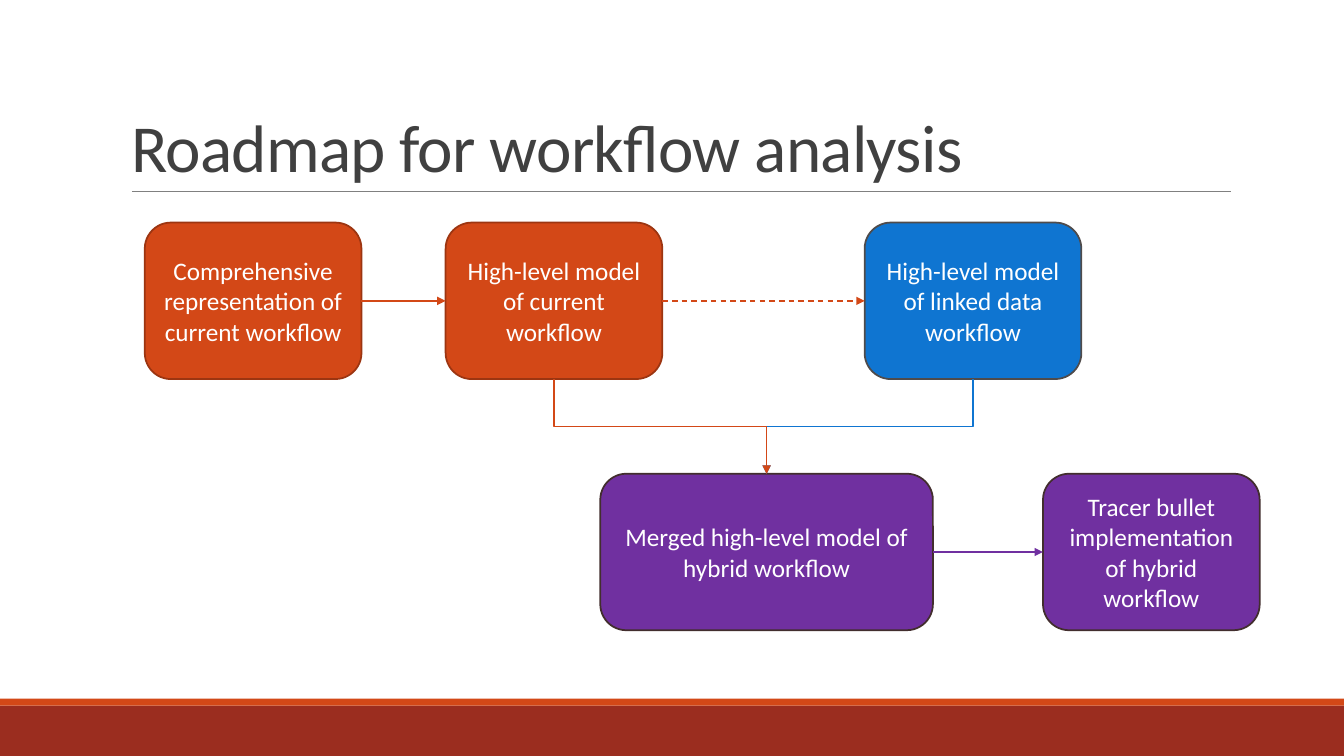
from lxml.etree import SubElement
from pptx import Presentation
from pptx.dml.color import RGBColor
from pptx.enum.dml import MSO_LINE
from pptx.enum.shapes import MSO_CONNECTOR as LINK, MSO_SHAPE as SHAPE
from pptx.enum.text import MSO_ANCHOR, MSO_AUTO_SIZE, PP_ALIGN
from pptx.oxml.ns import qn
from pptx.util import Pt

WHITE = RGBColor(0xFF, 0xFF, 0xFF)
DARK = RGBColor(0x40, 0x40, 0x40)
GRAY = RGBColor(0x80, 0x80, 0x80)
BRICK = RGBColor(0x9B, 0x2D, 0x1F)
ORANGE = RGBColor(0xD3, 0x48, 0x17)
RUST = RGBColor(0x9C, 0x35, 0x11)
BLUE = RGBColor(0x0F, 0x75, 0xD1)
SLATE = RGBColor(0x4F, 0x4B, 0x4B)
PURPLE = RGBColor(0x70, 0x30, 0xA0)
PLUM = RGBColor(0x42, 0x2E, 0x2E)

FONT = "Calibri"
TITLE = "Roadmap for workflow analysis"
WIDTH, HEIGHT = 960, 540
TOP_ROW, BOTTOM_ROW = 159, 338.4
STEP_W, MERGED_W, STEP_H = 154.8, 237.6, 111.8

# name: (text, left, top, width, fill, outline)
STEPS = {
    "full": ("Comprehensive representation of current workflow",
             103.4, TOP_ROW, STEP_W, ORANGE, RUST),
    "current": ("High-level model of current workflow",
                318.3, TOP_ROW, STEP_W, ORANGE, RUST),
    "linked": ("High-level model of linked data workflow",
               617.6, TOP_ROW, STEP_W, BLUE, SLATE),
    "merged": ("Merged high-level model of hybrid workflow",
               428.8, BOTTOM_ROW, MERGED_W, PURPLE, PLUM),
    "tracer": ("Tracer bullet implementation of hybrid workflow",
               745, BOTTOM_ROW, STEP_W, PURPLE, PLUM),
}
# (from, to, colour, dashed)
ARROWS = [
    ("full", "current", ORANGE, False),
    ("current", "linked", ORANGE, True),
    ("merged", "tracer", PURPLE, False),
    ("linked", "merged", BLUE, False),
    ("current", "merged", ORANGE, False),
]
BANDS = [(504, 36, BRICK), (499, 5, ORANGE)]  # top, height, colour
TOP_SITE, LEFT_SITE, BOTTOM_SITE, RIGHT_SITE = range(4)

prs = Presentation()
prs.slide_width, prs.slide_height = Pt(WIDTH), Pt(HEIGHT)
s = prs.slides.add_slide(prs.slide_layouts[5])


def add_box(kind, left, top, width, height, fill):
    sp = s.shapes.add_shape(kind, Pt(left), Pt(top), Pt(width), Pt(height))
    sp.shadow.inherit = False
    sp.fill.solid()
    sp.fill.fore_color.rgb = fill
    sp.line.fill.background()
    return sp


def add_step(text, left, top, width, fill, outline):
    sp = add_box(SHAPE.ROUNDED_RECTANGLE, left, top, width, STEP_H, fill)
    sp.line.color.rgb = outline
    sp.line.width = Pt(1.25)
    tf = sp.text_frame
    tf.word_wrap = True
    tf.vertical_anchor = MSO_ANCHOR.MIDDLE
    p = tf.paragraphs[0]
    p.text = text
    p.alignment = PP_ALIGN.CENTER
    p.font.name, p.font.size, p.font.color.rgb = FONT, Pt(18), WHITE
    return sp


def style_line(line, color, width, dashed=False, arrow=False):
    line.line.color.rgb = color
    line.line.width = Pt(width)
    if dashed:
        line.line.dash_style = MSO_LINE.DASH
    sp_pr = line._element.spPr
    if arrow:
        SubElement(sp_pr.find(qn("a:ln")), qn("a:tailEnd"), type="triangle")
    SubElement(sp_pr, qn("a:effectLst"))


def turn_elbow(link):
    """Turn an elbow by 90 degrees, so that it leaves and arrives vertically."""
    x1, y1, x2, y2 = link.begin_x, link.begin_y, link.end_x, link.end_y
    cx, cy = (x1 + x2) // 2, (y1 + y2) // 2
    link.begin_x, link.begin_y = cx + y1 - cy, cy - x1 + cx
    link.end_x, link.end_y = cx + y2 - cy, cy - x2 + cx
    link._element.spPr.find(qn("a:xfrm")).set("rot", str(90 * 60000))


def add_arrow(start, end, color, dashed):
    same_row = start.top == end.top
    kind = LINK.STRAIGHT if same_row else LINK.ELBOW
    link = s.shapes.add_connector(kind, 0, 0, 0, 0)
    link.begin_connect(start, RIGHT_SITE if same_row else BOTTOM_SITE)
    link.end_connect(end, LEFT_SITE if same_row else TOP_SITE)
    if not same_row:
        turn_elbow(link)
    style_line(link, color, 1, dashed, arrow=True)


for top, height, color in BANDS:
    add_box(SHAPE.RECTANGLE, 0, top, WIDTH, height, color)
rule = s.shapes.add_connector(LINK.STRAIGHT, Pt(94.3), Pt(136.8), Pt(879), Pt(136.8))
style_line(rule, GRAY, 0.5)

title = s.shapes.title
title.left, title.top, title.width, title.height = Pt(86.4), Pt(22.6), Pt(792), Pt(114.2)
tf = title.text_frame
tf.word_wrap = True
tf.auto_size = MSO_AUTO_SIZE.NONE
tf.vertical_anchor = MSO_ANCHOR.BOTTOM
p = tf.paragraphs[0]
p.alignment = PP_ALIGN.LEFT
p.line_spacing = 0.85
r = p.add_run()
r.text = TITLE
r.font.name, r.font.size, r.font.color.rgb = FONT, Pt(48), DARK
r.font._element.set("spc", "-50")

boxes = {name: add_step(*step) for name, step in STEPS.items()}
for start, end, color, dashed in ARROWS:
    add_arrow(boxes[start], boxes[end], color, dashed)

prs.save("out.pptx")
